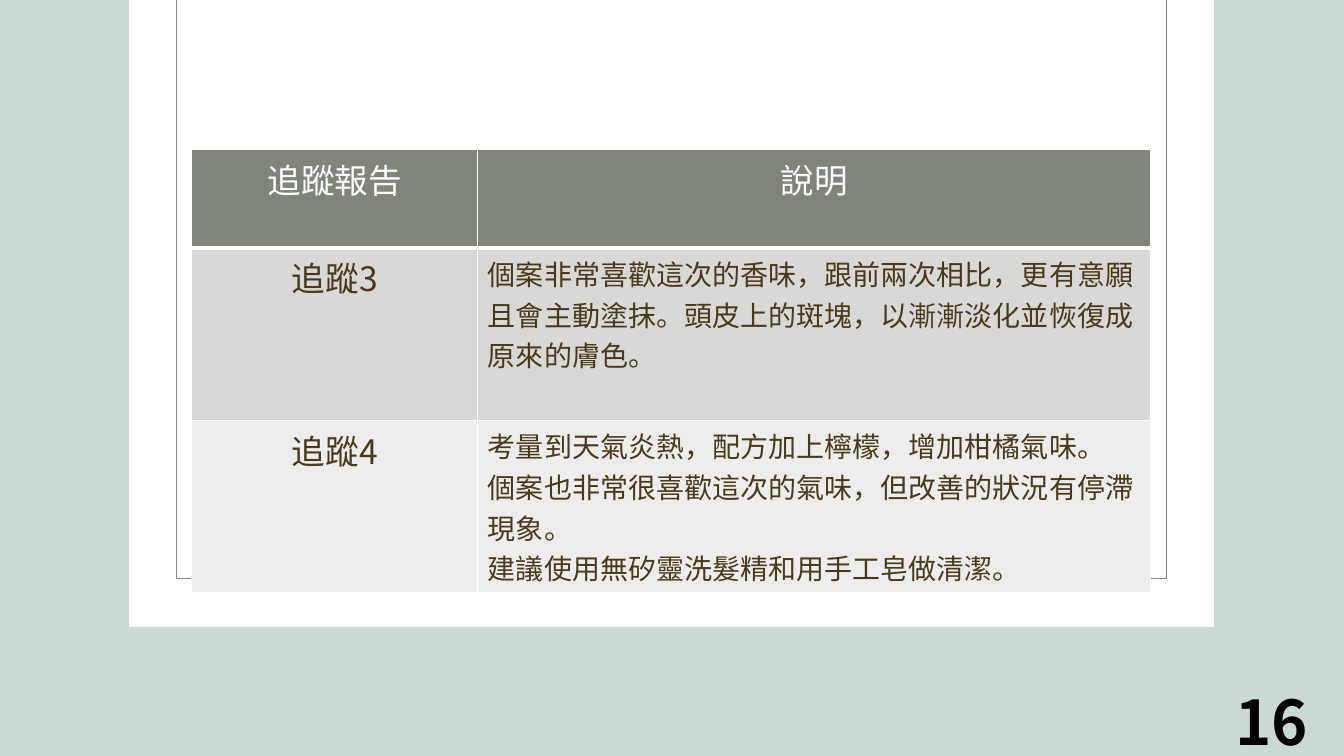
from lxml import etree
from pptx import Presentation
from pptx.dml.color import RGBColor
from pptx.enum.shapes import MSO_SHAPE
from pptx.enum.text import MSO_ANCHOR, PP_ALIGN
from pptx.oxml.ns import qn
from pptx.util import Inches, Pt

BACKGROUND = RGBColor(0xCA, 0xD8, 0xD6)
WHITE = RGBColor(0xFF, 0xFF, 0xFF)
BLACK = RGBColor(0, 0, 0)
SAGE = RGBColor(0x7E, 0x86, 0x79)
BROWN = RGBColor(0x4A, 0x3A, 0x1C)
BANDS = [RGBColor(0xD8, 0xD9, 0xD7), RGBColor(0xEC, 0xED, 0xEC)]
TABLE_FONT = "Noto Sans CJK JP"
NUMBER_FONT = "Noto Sans CJK TC"

COLUMN_WIDTHS = [2.84, 6.67]
ROW_HEIGHTS = [0.98, 1.71, 1.71]
REPORTS = [
    (["追蹤報告"], ["說明"]),
    (["追蹤3"], ["個案非常喜歡這次的香味，跟前兩次相比，更有意願且會主動塗抹。"
               "頭皮上的斑塊，以漸漸淡化並恢復成原來的膚色。"]),
    (["追蹤4"], ["考量到天氣炎熱，配方加上檸檬，增加柑橘氣味。",
               "個案也非常很喜歡這次的氣味，但改善的狀況有停滯現象。",
               "建議使用無矽靈洗髮精和用手工皂做清潔。"]),
]


def add_run(p, text, size, font, color, bold=False):
    r = p.add_run()
    r.text = text
    r.font.size = Pt(size)
    r.font.name = font
    r.font.bold = bold
    r.font.color.rgb = color
    ea = etree.SubElement(r.font._element, qn("a:ea"))
    ea.set("typeface", font)


def add_panel(slide, left, top, width, height):
    """White sheet with a thin frame inside it."""
    margin = 0.47
    sheet = slide.shapes.add_shape(
        MSO_SHAPE.RECTANGLE, Inches(left), Inches(top), Inches(width), Inches(height))
    sheet.shadow.inherit = False
    sheet.fill.solid()
    sheet.fill.fore_color.rgb = WHITE
    sheet.line.fill.background()

    frame = slide.shapes.add_shape(
        MSO_SHAPE.RECTANGLE, Inches(left + margin), Inches(top - 0.01),
        Inches(width - 2 * margin), Inches(height - margin))
    frame.shadow.inherit = False
    frame.fill.background()
    frame.line.color.rgb = SAGE
    frame.line.width = Pt(1)


def set_borders(cell, widths):
    tc_pr = cell._tc.get_or_add_tcPr()
    for side, width in widths.items():
        ln = etree.SubElement(tc_pr, qn(f"a:ln{side}"), w=str(Pt(width)))
        fill = etree.SubElement(ln, qn("a:solidFill"))
        etree.SubElement(fill, qn("a:srgbClr"), val=str(WHITE))


def add_report_table(slide, left, top):
    """Header row, then one banded row per follow-up."""
    table = slide.shapes.add_table(
        len(REPORTS), len(COLUMN_WIDTHS), Inches(left), Inches(top),
        Inches(sum(COLUMN_WIDTHS)), Inches(sum(ROW_HEIGHTS))).table
    table.first_row = False
    table.horz_banding = False
    for column, width in zip(table.columns, COLUMN_WIDTHS):
        column.width = Inches(width)
    for row, height in zip(table.rows, ROW_HEIGHTS):
        row.height = Inches(height)

    for i, report in enumerate(REPORTS):
        header = i == 0
        for j, lines in enumerate(report):
            cell = table.cell(i, j)
            set_borders(cell, {"L": 1, "R": 1, "T": 3 if i == 1 else 1,
                               "B": 3 if header else 1})
            cell.fill.solid()
            cell.fill.fore_color.rgb = SAGE if header else BANDS[i - 1]
            description = j == 1 and not header
            tf = cell.text_frame
            for k, line in enumerate(lines):
                p = tf.add_paragraph() if k else tf.paragraphs[0]
                p.alignment = PP_ALIGN.LEFT if description else PP_ALIGN.CENTER
                add_run(p, line, 20 if description else 24, TABLE_FONT,
                        WHITE if header else BROWN)


def add_page_number(slide, left, top, width, height, number):
    tf = slide.shapes.add_textbox(
        Inches(left), Inches(top), Inches(width), Inches(height)).text_frame
    tf.word_wrap = True
    tf.vertical_anchor = MSO_ANCHOR.MIDDLE
    p = tf.paragraphs[0]
    p.alignment = PP_ALIGN.RIGHT
    add_run(p, number, 44, NUMBER_FONT, BLACK, bold=True)


def main():
    prs = Presentation()
    prs.slide_width, prs.slide_height = Inches(13.33), Inches(7.5)
    slide = prs.slides.add_slide(prs.slide_layouts[6])
    slide.background.fill.solid()
    slide.background.fill.fore_color.rgb = BACKGROUND
    add_panel(slide, 1.28, 0, 10.76, 6.22)
    add_page_number(slide, 10.07, 6.95, 3, 0.4, "16")
    add_report_table(slide, 1.9, 1.48)
    prs.save("out.pptx")


if __name__ == "__main__":
    main()
